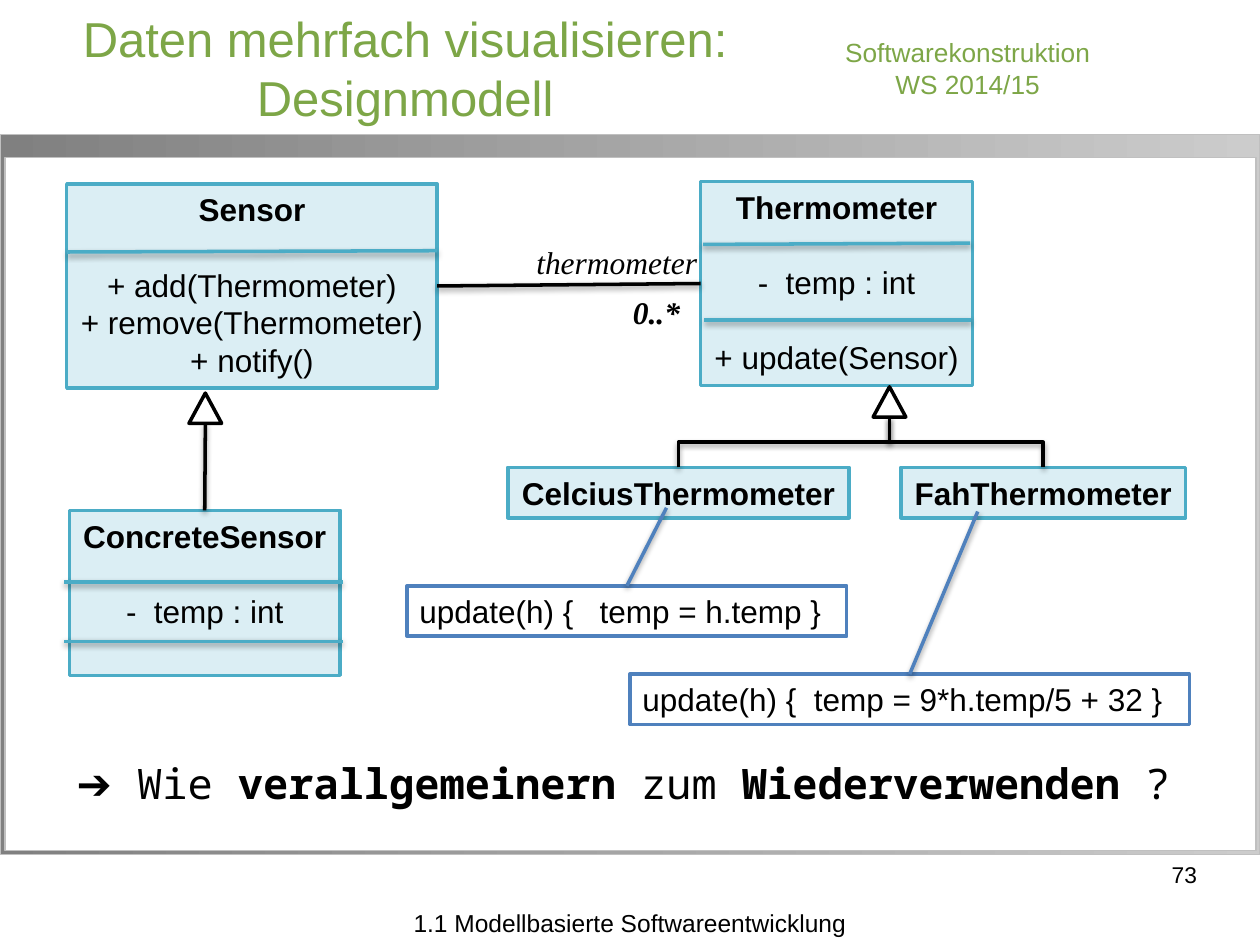
from dataclasses import dataclass
from typing import NamedTuple, Optional

from lxml import etree
from pptx import Presentation
from pptx.dml.color import RGBColor
from pptx.enum.shapes import MSO_CONNECTOR, MSO_SHAPE
from pptx.enum.text import MSO_ANCHOR, MSO_AUTO_SIZE, PP_ALIGN
from pptx.oxml import parse_xml
from pptx.oxml.ns import nsdecls
from pptx.util import Emu, Inches, Pt

RECT, TRIANGLE = MSO_SHAPE.RECTANGLE, MSO_SHAPE.ISOSCELES_TRIANGLE
STRAIGHT, ELBOW = MSO_CONNECTOR.STRAIGHT, MSO_CONNECTOR.ELBOW
LEFT, CENTER, RIGHT = PP_ALIGN.LEFT, PP_ALIGN.CENTER, PP_ALIGN.RIGHT
TOP, MIDDLE = MSO_ANCHOR.TOP, MSO_ANCHOR.MIDDLE
TOP_SIDE, LEFT_SIDE, RIGHT_SIDE = 0, 1, 3
COLS, ROWS = 100, 75
TITLE_ONLY = 5


@dataclass(frozen=True)
class Theme:
    green: str = "7DA647"
    black: str = "000000"
    white: str = "FFFFFF"
    teal: str = "4BACC6"
    pale: str = "DBEEF4"
    blue: str = "4F81BD"
    frame: str = "C0C0C0"
    band: tuple = ("808080", "CCCCCC")
    sans: str = "Arial"
    serif: str = "Times New Roman"
    mono: str = "Noto Sans Mono"
    title: float = 28
    question: float = 24
    body: float = 18
    course: float = 15
    footer: float = 14
    number: float = 13
    gap: float = 21.5
    stroke: float = 2
    hairline: float = 0.75


class Box(NamedTuple):
    col: float
    row: float
    cols: float
    rows: float


class UmlClass(NamedTuple):
    box: Box
    sections: tuple


class Note(NamedTuple):
    box: Box
    code: str
    target: tuple


class Line(NamedTuple):
    start: tuple
    end: tuple
    color: str


T = Theme()
prs = Presentation()
prs.slide_width, prs.slide_height = Inches(10), Inches(7.5)
slide = prs.slides.add_slide(prs.slide_layouts[TITLE_ONLY])


def x(col: float) -> Emu:
    return Emu(round(prs.slide_width * col / COLS))


def y(row: float) -> Emu:
    return Emu(round(prs.slide_height * row / ROWS))


def place(box: Box) -> tuple:
    return x(box.col), y(box.row), x(box.cols), y(box.rows)


def rgb(color: str) -> RGBColor:
    return RGBColor.from_string(color)


def frame_text(sp, margins=(0.1, 0.05), anchor=TOP, wrap=False):
    tf = sp.text_frame
    tf.auto_size = MSO_AUTO_SIZE.NONE
    tf.word_wrap = wrap
    tf.vertical_anchor = anchor
    tf.margin_left = tf.margin_right = Inches(margins[0])
    tf.margin_top = tf.margin_bottom = Inches(margins[1])
    return tf


def write(tf, text: str, *, size=T.body, font=T.sans, color=T.black, bold=False,
          italic=False, align=CENTER, before=0, spacing=None, join=False) -> None:
    p = tf.paragraphs[-1]
    if p.runs and not join:
        p = tf.add_paragraph()
    if not join:
        p.alignment, p.space_before, p.line_spacing = align, Pt(before), spacing
    r = p.add_run()
    r.text = text
    r.font.name, r.font.size, r.font.color.rgb = font, Pt(size), rgb(color)
    r.font.bold, r.font.italic = bold, italic


def add_box(box: Box, fill: Optional[str], line: str, width=T.stroke, kind=RECT):
    sp = slide.shapes.add_shape(kind, *place(box))
    sp.shadow.inherit = False
    if fill:
        sp.fill.solid()
        sp.fill.fore_color.rgb = rgb(fill)
    sp.line.color.rgb, sp.line.width = rgb(line), Pt(width)
    return sp


def add_label(box: Box, text: str, margins=(0, 0), **style) -> None:
    write(frame_text(slide.shapes.add_textbox(*place(box)), margins), text, **style)


def add_class(uml: UmlClass):
    sp = add_box(uml.box, T.pale, T.teal)
    tf = frame_text(sp)
    for i, section in enumerate(uml.sections):
        for j, text in enumerate(section):
            write(tf, text, bold=i == 0, before=T.gap if i and j == 0 else 0)
    return sp


def add_line(line: Line, kind=STRAIGHT):
    (c1, r1), (c2, r2) = line.start, line.end
    cxn = slide.shapes.add_connector(kind, x(c1), y(r1), x(c2), y(r2))
    cxn.line.color.rgb, cxn.line.width = rgb(line.color), Pt(T.stroke)
    effects = parse_xml(f"<a:effectLst {nsdecls('a')}/>")
    shadow = etree.SubElement(effects, effects.tag.replace("effectLst", "outerShdw"),
                              blurRad="40000", dist="20000", dir="5400000", rotWithShape="0")
    color = etree.SubElement(shadow, shadow.tag.replace("outerShdw", "srgbClr"), val=T.black)
    etree.SubElement(color, color.tag.replace("srgbClr", "alpha"), val="38000")
    cxn._element.spPr.append(effects)
    return cxn


def add_upright_elbow(line: Line) -> None:
    (c1, r1), (c2, r2) = line.start, line.end
    mid_c, mid_r = (c1 + c2) / 2, (r1 + r2) / 2
    dc, dr = c1 - mid_c, r1 - mid_r
    turned = Line((mid_c + dr, mid_r - dc), (mid_c - dr, mid_r + dc), line.color)
    add_line(turned, ELBOW)._element.spPr.get_or_add_xfrm().rot = 90


def add_note(note: Note) -> None:
    sp = add_box(note.box, T.white, T.blue)
    write(frame_text(sp), note.code, align=LEFT)
    top = (note.box.col + note.box.cols / 2, note.box.row)
    add_line(Line(top, note.target, T.blue)).begin_connect(sp, TOP_SIDE)


CLASSES = (
    UmlClass(Box(55.6, 14.4, 21.6, 16.2),
             (("Thermometer",), ("-  temp : int",), ("+ update(Sensor)",))),
    UmlClass(Box(5.3, 14.6, 29.4, 16.2),
             (("Sensor",), ("+ add(Thermometer)", "+ remove(Thermometer)", "+ notify()"))),
    UmlClass(Box(5.5, 40.5, 21.5, 13.1), (("ConcreteSensor",), ("-  temp : int",))),
    UmlClass(Box(40.3, 37.1, 27.1, 4), (("CelciusThermometer",),)),
    UmlClass(Box(71.5, 37.1, 22.6, 4), (("FahThermometer",),)),
)
DIVIDERS = (((55.8, 19.4), (77, 19.3)), ((55.9, 25.4), (77.1, 25.4)),
            ((5.3, 20), (34.7, 19.9)),
            ((5.1, 46.2), (27.2, 46.2)), ((5.1, 50.9), (27.2, 50.9)))
ARROWHEADS = (Box(69.3, 30.7, 2.6, 2.4), Box(15, 31.2, 2.6, 2.4))
NOTES = (
    Note(Box(32.3, 46.5, 34.9, 4), "update(h) {   temp = h.temp }", (52.9, 40.3)),
    Note(Box(50, 53.5, 44.4, 4), "update(h) {  temp = 9*h.temp/5 + 32 }", (77.6, 40.6)),
)
QUESTION = (("➔ Wie ", False), ("verallgemeinern", True), (" zum ", False),
            ("Wiederverwenden", True), (" ?", False))


def main() -> None:
    band = add_box(Box(0, 10.7, 100, 57.1), None, T.frame, T.hairline)
    band.fill.gradient()
    band.fill.gradient_angle = 0
    for stop, color, position in zip(band.fill.gradient_stops, T.band, (0, 1)):
        stop.color.rgb, stop.position = rgb(color), position
    add_box(Box(0.4, 12.5, 99.3, 55), T.white, T.frame, T.hairline)

    title = slide.shapes.title
    title.left, title.top, title.width, title.height = place(Box(0, 0, 64.3, 10.7))
    write(frame_text(title, (0, 0), MIDDLE, True), "Daten mehrfach visualisieren: Designmodell",
          size=T.title, color=T.green)
    tf = frame_text(slide.shapes.add_textbox(*place(Box(64.3, 2.5, 25, 10.7))), (0.09, 0.04))
    for text in ("Softwarekonstruktion", "WS 2014/15"):
        write(tf, text, size=T.course, color=T.green)

    thermometer, sensor, concrete, *_ = [add_class(uml) for uml in CLASSES]
    for start, end in DIVIDERS:
        add_line(Line(start, end, T.teal))
    for box in ARROWHEADS:
        add_box(box, T.white, T.black, kind=TRIANGLE)
    for uml in CLASSES[3:]:
        top = (uml.box.col + uml.box.cols / 2, uml.box.row)
        add_upright_elbow(Line(top, (70.6, 33.1), T.black))
    add_line(Line((16.2, 40.5), (16.3, 33.6), T.black)).begin_connect(concrete, TOP_SIDE)
    link = add_line(Line((34.7, 22.7), (55.6, 22.5), T.black))
    link.begin_connect(sensor, RIGHT_SIDE)
    link.end_connect(thermometer, LEFT_SIDE)
    for note in NOTES:
        add_note(note)

    add_label(Box(41.5, 18.8, 14.9, 4), "thermometer", (0.1, 0.05), font=T.serif, italic=True)
    add_label(Box(49.2, 22.8, 5.8, 4), "0..*", (0.1, 0.05), font=T.serif, bold=True, italic=True)
    tf = frame_text(slide.shapes.add_textbox(*place(Box(5.1, 58.8, 92.1, 6.3))),
                    anchor=MIDDLE, wrap=True)
    for i, (text, bold) in enumerate(QUESTION):
        write(tf, text, size=T.question, font=T.mono, bold=bold, align=LEFT,
              spacing=1.1, join=i > 0)
    add_label(Box(24.1, 72.1, 51.8, 2.3), "1.1 Modellbasierte Softwareentwicklung", size=T.footer)
    add_label(Box(71.7, 68.3, 23.3, 3.1), "73", size=T.number, align=RIGHT)
    prs.save("out.pptx")


if __name__ == "__main__":
    main()
